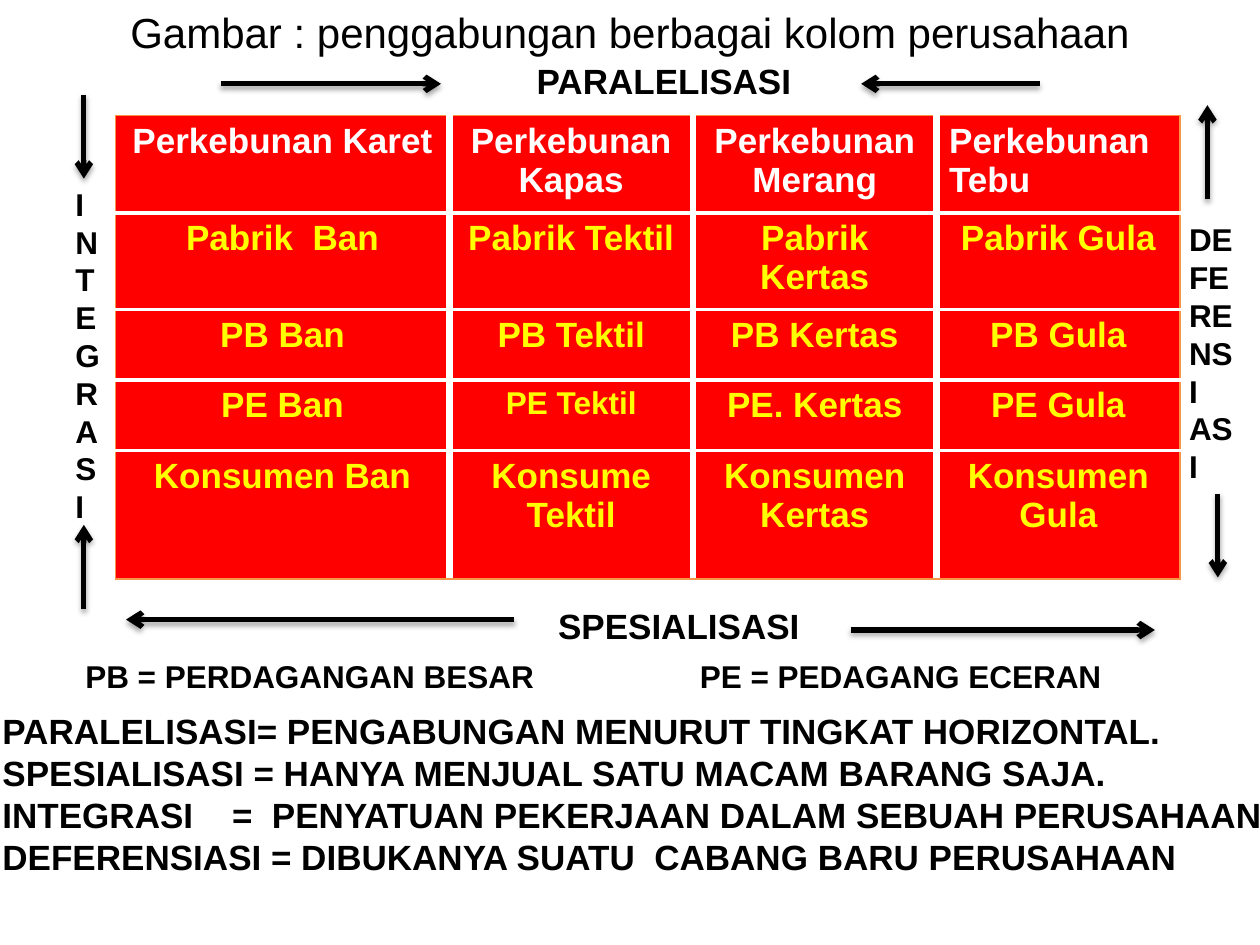
"""Build a slide on merging company columns: a product chain table with arrows and definitions."""
from lxml import etree
from pptx import Presentation
from pptx import util as u
from pptx.dml.color import RGBColor
from pptx.enum import shapes, text
from pptx.oxml import parse_xml
from pptx.oxml.ns import nsdecls, qn

BLACK = RGBColor(0x00, 0x00, 0x00)
WHITE = RGBColor(0xFF, 0xFF, 0xFF)
RED = RGBColor(0xFF, 0x00, 0x00)
YELLOW = RGBColor(0xFF, 0xFF, 0x00)
ORANGE = RGBColor(0xF7, 0x96, 0x46)
CENTER, LEFT = text.PP_ALIGN.CENTER, text.PP_ALIGN.LEFT


def style(frame, size, color, align, bold=True):
    for para in frame.paragraphs:
        para.alignment = align
        for span in para.runs:
            span.font.name = "Arial"
            span.font.size = u.Pt(size)
            span.font.bold = bold
            span.font.color.rgb = color


def add_border(cell, side, color, points):
    cell._tc.get_or_add_tcPr().append(parse_xml(
        f'<a:ln{side} {nsdecls("a")} w="{u.Pt(points)}"><a:solidFill>'
        f'<a:srgbClr val="{color}"/></a:solidFill></a:ln{side}>'))


deck = Presentation()
deck.slide_width, deck.slide_height = u.Cm(25.4), u.Cm(19.05)
page = deck.slides.add_slide(deck.slide_layouts[6])

title = page.shapes.add_textbox(0, 0, deck.slide_width, u.Cm(1.27))
title.text_frame.word_wrap = True
title.text_frame.vertical_anchor = text.MSO_ANCHOR.MIDDLE
title.text_frame.text = "Gambar : penggabungan berbagai kolom perusahaan"
style(title.text_frame, 24, BLACK, CENTER, bold=False)

rows = [
    ["Perkebunan Karet", "Perkebunan Kapas", "Perkebunan Merang", "Perkebunan Tebu"],
    ["Pabrik  Ban", "Pabrik Tektil", "Pabrik Kertas", "Pabrik Gula"],
    ["PB Ban", "PB Tektil", "PB Kertas", "PB Gula"],
    ["PE Ban", "PE Tektil", "PE. Kertas", "PE Gula"],
    ["Konsumen Ban", "Konsume Tektil", "Konsumen Kertas", "Konsumen Gula"],
]
widths = [6.73, 4.91, 4.91, 4.91]
heights = [1.96, 1.93, 1.42, 1.42, 2.59]
last_row, last_col = len(rows) - 1, len(widths) - 1
table = page.shapes.add_table(
    len(rows), len(widths), u.Cm(2.33), u.Cm(2.33),
    u.Cm(sum(widths)), u.Cm(sum(heights))).table
for column, width in zip(table.columns, widths):
    column.width = u.Cm(width)
for r, (labels, height) in enumerate(zip(rows, heights)):
    table.rows[r].height = u.Cm(height)
    for c, label in enumerate(labels):
        cell = table.cell(r, c)
        edges = [("L", c == 0, 4.5), ("R", c == last_col, 4.5),
                 ("T", r == 0, 2.25), ("B", r == last_row, 2.25)]
        for side, outer, points in edges:
            add_border(cell, side, ORANGE if outer else WHITE, 1 if outer else points)
        cell.fill.solid()
        cell.fill.fore_color.rgb = RED
        cell.text_frame.text = label
        style(cell.text_frame, 18 if label == "PE Tektil" else 20,
              WHITE if r == 0 else YELLOW,
              LEFT if label == "Perkebunan Tebu" else CENTER)

arrows = [
    (4.45, 1.69, 8.89, 1.69),
    (24.55, 9.95, 24.55, 11.64),
    (24.34, 4.02, 24.34, 2.12),
    (1.69, 12.28, 1.69, 10.58),
    (1.69, 1.91, 1.69, 3.6),
    (10.37, 12.49, 2.54, 12.49),
    (17.15, 12.7, 23.28, 12.7),
    (20.96, 1.69, 17.36, 1.69),
]
for ends in arrows:
    arrow = page.shapes.add_connector(
        shapes.MSO_CONNECTOR.STRAIGHT, *[u.Cm(end) for end in ends])
    arrow.line.color.rgb = BLACK
    arrow.line.width = u.Pt(3)
    etree.SubElement(arrow.line._get_or_add_ln(), qn("a:tailEnd"), type="arrow")
    arrow._element.spPr.append(parse_xml(
        f'<a:effectLst {nsdecls("a")}><a:outerShdw blurRad="{u.Pt(3.1)}" '
        f'dist="{u.Pt(1.8)}" dir="5400000" rotWithShape="0"><a:srgbClr val="{BLACK}">'
        '<a:alpha val="35000"/></a:srgbClr></a:outerShdw></a:effectLst>'))

definitions = [
    "PARALELISASI= PENGABUNGAN MENURUT TINGKAT HORIZONTAL.",
    "SPESIALISASI = HANYA MENJUAL SATU MACAM BARANG SAJA.",
    "INTEGRASI\t=  PENYATUAN PEKERJAAN DALAM SEBUAH PERUSAHAAN",
    "DEFERENSIASI = DIBUKANYA SUATU  CABANG BARU PERUSAHAAN",
]
notes = [
    (10.57, 1.07, 5.7, 1.12, 20, ["PARALELISASI"], None),
    (11, 12.07, 5.45, 1.12, 20, ["SPESIALISASI"], None),
    (23.72, 4.32, 1.68, 5.64, 18, ["DEFERENS", "I", "AS", "I"], None),
    (1.27, 3.6, 0.84, 7.19, 18, ["INTEGRASI"], None),
    (1.47, 13.13, 21.21, 1.02, 18,
     ["PB = PERDAGANGAN BESAR\tPE = PEDAGANG ECERAN"], 12.39),
    (-0.2, 14.17, 26.54, 4.52, 20, definitions, 4.63),
]
for left, top, width, height, size, lines, tab in notes:
    box = page.shapes.add_textbox(u.Cm(left), u.Cm(top), u.Cm(width), u.Cm(height))
    frame = box.text_frame
    frame.word_wrap = True
    frame.text = "\n".join(lines)
    style(frame, size, BLACK, LEFT)
    for para in frame.paragraphs:
        if "\t" in para.text:
            stops = etree.SubElement(para._p.get_or_add_pPr(), qn("a:tabLst"))
            etree.SubElement(stops, qn("a:tab"), pos=str(u.Cm(tab)), algn="l")

deck.save("out.pptx")
